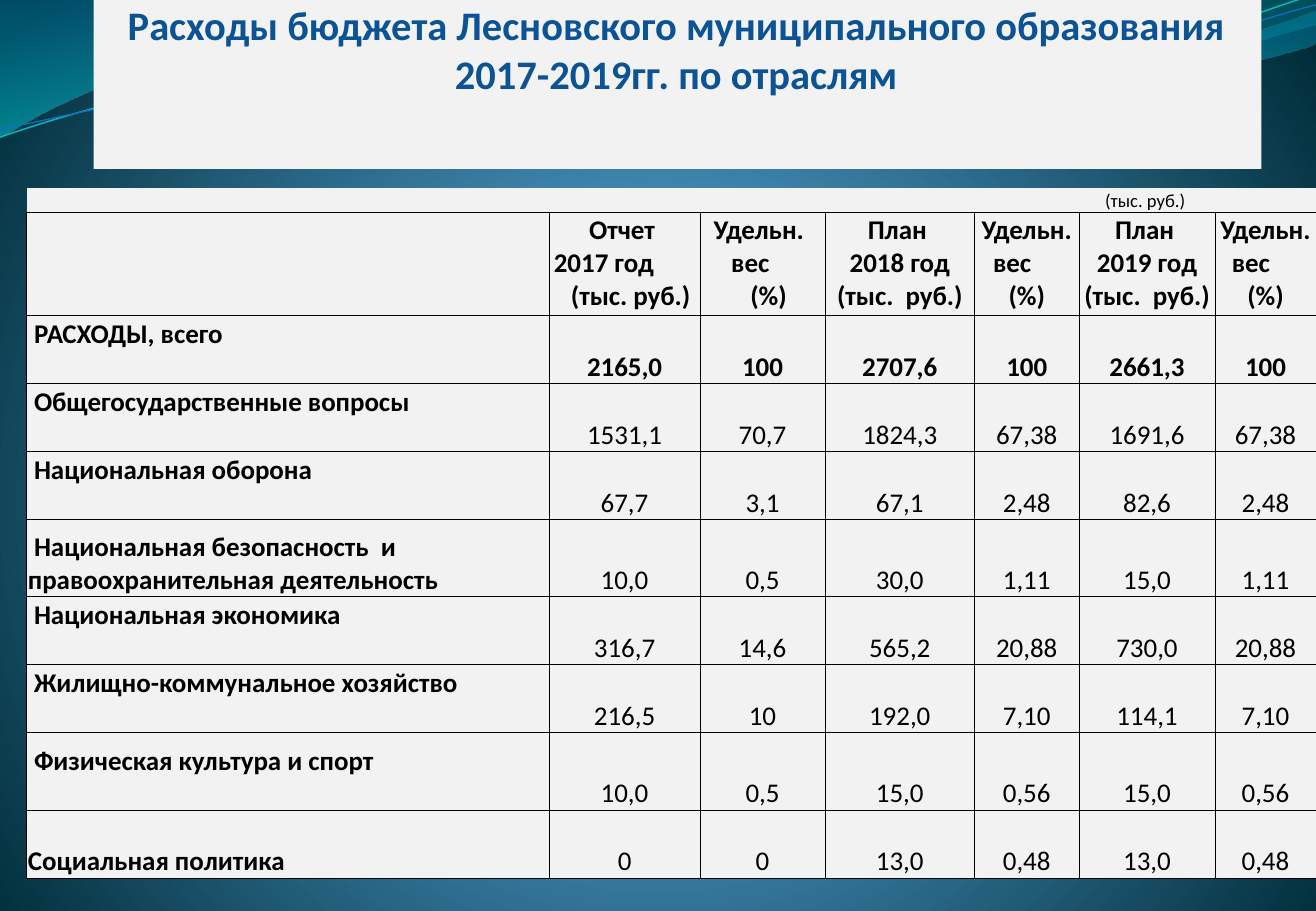
"""Builds the slide with the municipal budget expenses by sector, 2017-2019."""
from lxml import etree
from pptx import Presentation
from pptx import util as u
from pptx.dml.color import RGBColor
from pptx.enum import shapes, text
from pptx.oxml import parse_xml

W, H = 10.83, 7.5
NS = "http://schemas.openxmlformats.org/drawingml/2006/main"
FONT = "Calibri"
PANEL = RGBColor(0xF2, 0xF2, 0xF2)
TITLE_BLUE = RGBColor(0x0B, 0x53, 0x94)
BLACK = RGBColor(0, 0, 0)
TEAL_LINE = RGBColor(0x0A, 0xB8, 0xBF)
BLUE_LINE = RGBColor(0x0F, 0x6F, 0xC6)

TITLE = "Расходы бюджета Лесновского муниципального образования 2017-2019гг. по отраслям"
UNIT = "(тыс. руб.)"
COLS = [4.3, 1.24, 1.03, 1.23, 0.86, 1.12, 0.83]
ROWS = [0.2, 0.85, 0.56, 0.56, 0.56, 0.63, 0.56, 0.56, 0.64, 0.56]
# header lines with their shift from the column's centre
PLAIN_SHARE = [("Удельн.", 0), ("вес", -0.12), ("(%)", 0)]
HEADS = [
    [("", 0)],
    [("Отчет", -0.02), ("2017 год", -0.17), (UNIT, 0.05)],
    [("Удельн.", -0.03), ("вес", -0.1), ("(%)", 0.05)],
    [("План", -0.02), ("2018 год (тыс.  руб.)", 0)],
    PLAIN_SHARE,
    [("План", -0.02), ("2019 год (тыс.  руб.)", 0)],
    PLAIN_SHARE,
]
# label, first-line indent, lift above the cell bottom, values
SECTORS = [
    ("РАСХОДЫ, всего", 0.05, 0.27, "2165,0 100 2707,6 100 2661,3 100"),
    ("Общегосударственные вопросы", 0.05, 0.27, "1531,1 70,7 1824,3 67,38 1691,6 67,38"),
    ("Национальная оборона", 0.05, 0.27, "67,7 3,1 67,1 2,48 82,6 2,48"),
    ("Национальная безопасность  и правоохранительная деятельность", 0.05, 0,
     "10,0 0,5 30,0 1,11 15,0 1,11"),
    ("Национальная экономика", 0.05, 0.27, "316,7 14,6 565,2 20,88 730,0 20,88"),
    ("Жилищно-коммунальное хозяйство", 0.05, 0.27, "216,5 10 192,0 7,10 114,1 7,10"),
    ("Физическая культура и спорт", 0.05, 0.27, "10,0 0,5 15,0 0,56 15,0 0,56"),
    ("Социальная политика", 0, 0, "0 0 13,0 0,48 13,0 0,48"),
]
BACKDROP = [(0, "4AA0D6", 100), (25, "4C98C7", 100), (100, "002C38", 100)]
GLOW = ('<a:path path="circle"><a:fillToRect l="10000" t="110000" r="10000" '
        'b="100000"/></a:path>')
DOWN = '<a:lin ang="5400000" scaled="1"/>'
WAVES = [
    ([[(0, 0)], [(4.77, 0)], [(5.15, .17), (7.19, .63), (8.22, .63)],
      [(9.24, .63), (10.38, .26), (10.83, .09)], [(10.83, .36)],
      [(10.65, .44), (9.42, .76), (8.08, .75)], [(6.74, .75), (4.14, .28), (2.79, .34)],
      [(1.4, .35), (.5, .83), (0, 1.13)]],
     [(0, "0074A1", 45), (100, "00C6CF", 55)]),
    ([[(5.19, 0)], [(5.52, .11), (7.39, .62), (8.33, .65)],
      [(9.27, .69), (10.42, .32), (10.83, .21)], [(10.83, 0)]],
     [(0, "00A1A9", 30), (80, "008BBF", 45), (100, "008BBF", 45)]),
]
STRANDS = [
    ([[(0, 1.13)], [(.52, .95), (1.71, .58), (3, .53)], [(4.28, .47), (6.42, .88), (7.72, .79)],
      [(9.02, .69), (10.17, .14), (10.81, -.04)]], TEAL_LINE, 0.85),
    ([[(0, 1.06)], [(.51, .98), (1.77, .62), (3.07, .57)], [(4.36, .52), (6.47, .83), (7.76, .74)],
      [(9.06, .66), (10.2, .19), (10.83, .04)]], BLUE_LINE, 0.75),
]


def gradient(fill, parent, stops, direction):
    fill.background()
    gs = "".join(f'<a:gs pos="{pos * 1000}"><a:srgbClr val="{rgb}"><a:alpha val="{alpha * 1000}"/>'
                 '</a:srgbClr></a:gs>' for pos, rgb, alpha in stops)
    parent.replace(parent.find(f"{{{NS}}}noFill"), parse_xml(
        f'<a:gradFill xmlns:a="{NS}" rotWithShape="1"><a:gsLst>{gs}</a:gsLst>{direction}</a:gradFill>'))


def curve(s, outline, close):
    pts = [(u.Inches(x), u.Inches(y)) for part in outline for x, y in part]
    builder = s.shapes.build_freeform(*pts[0], scale=1.0)
    builder.add_line_segments(pts[1:], close=close)
    sp = builder.convert_to_shape()
    sp.shadow.inherit = False
    segments = iter(list(sp._element.iter(f"{{{NS}}}lnTo")))
    for part in outline[1:]:
        first, *rest = [next(segments) for _ in part]
        if rest:
            first.tag = f"{{{NS}}}cubicBezTo"
        for seg in rest:
            first.append(seg[0])
            seg.getparent().remove(seg)
    return sp


def write(tf, lines, size=16, bold=False, color=BLACK, align=text.PP_ALIGN.CENTER, indent=0):
    tf.word_wrap = True
    for i, (line, shift) in enumerate(lines):
        p = tf.add_paragraph() if i else tf.paragraphs[0]
        p.alignment = align
        ppr = p._p.get_or_add_pPr()
        ppr.set("marL", str(u.Inches(max(2 * shift, 0))))
        ppr.set("marR", str(u.Inches(max(-2 * shift, 0))))
        ppr.set("indent", str(u.Inches(indent)))
        if not line:
            etree.SubElement(p._p, f"{{{NS}}}endParaRPr", sz=str(size * 100))
            continue
        r = p.add_run()
        r.text = line
        f = r.font
        f.name, f.size, f.bold, f.color.rgb = FONT, u.Pt(size), bold, color


def style(cell, sides, lift=0, anchor=text.MSO_ANCHOR.BOTTOM):
    tcpr = cell._tc.get_or_add_tcPr()
    for side in "LRTB":
        paint = '<a:solidFill><a:srgbClr val="000000"/></a:solidFill>' if side in sides else "<a:noFill/>"
        tcpr.append(parse_xml(f'<a:ln{side} xmlns:a="{NS}" w="6350">{paint}</a:ln{side}>'))
    cell.fill.solid()
    cell.fill.fore_color.rgb = PANEL
    cell.margin_left = cell.margin_right = cell.margin_top = u.Inches(0.01)
    cell.margin_bottom = u.Inches(lift)
    cell.vertical_anchor = anchor


def add_budget(s):
    frame = s.shapes.add_table(len(ROWS), len(COLS), u.Inches(0.22), u.Inches(1.55),
                               u.Inches(sum(COLS)), u.Inches(sum(ROWS)))
    table = frame.table
    table.first_row = table.horz_banding = False
    for col, width in zip(table.columns, COLS):
        col.width = u.Inches(width)
    for row, height in zip(table.rows, ROWS):
        row.height = u.Inches(height)
    table.cell(0, 4).merge(table.cell(0, 6))
    for c, head in enumerate(HEADS):
        style(table.cell(0, c), "B")
        write(table.cell(0, c).text_frame, [(UNIT if c == 4 else "", 0)], size=11)
        style(table.cell(1, c), "LRTB", anchor=text.MSO_ANCHOR.TOP)
        write(table.cell(1, c).text_frame, head, bold=True)
    for i, (label, indent, lift, values) in enumerate(SECTORS):
        cell = table.cell(i + 2, 0)
        style(cell, "LRTB", lift)
        write(cell.text_frame, [(label, 0)], bold=True, align=text.PP_ALIGN.LEFT, indent=indent)
        for c, value in enumerate(values.split(), 1):
            cell = table.cell(i + 2, c)
            style(cell, "LRTB")
            write(cell.text_frame, [(value, 0)], bold=i == 0)


def main():
    prs = Presentation()
    prs.slide_width, prs.slide_height = u.Inches(W), u.Inches(H)
    s = prs.slides.add_slide(prs.slide_layouts[6])
    fill = s.background.fill
    gradient(fill, s.background._cSld.get_or_add_bgPr(), BACKDROP, GLOW)
    for outline, stops in WAVES:
        sp = curve(s, outline, True)
        sp.line.fill.background()
        gradient(sp.fill, sp._element.spPr, stops, DOWN)
    for outline, color, width in STRANDS:
        sp = curve(s, outline, False)
        sp.fill.background()
        sp.line.color.rgb, sp.line.width = color, u.Pt(width)

    sp = s.shapes.add_shape(shapes.MSO_SHAPE.RECTANGLE, u.Inches(0.77), 0, u.Inches(9.61), u.Inches(1.39))
    sp.shadow.inherit = False
    sp.fill.solid()
    sp.fill.fore_color.rgb = PANEL
    sp.line.fill.background()
    tf = sp.text_frame
    tf.margin_left = tf.margin_top = tf.margin_bottom = 0
    tf.margin_right = u.Inches(0.02)
    tf.vertical_anchor = text.MSO_ANCHOR.TOP
    write(tf, [(TITLE, 0)], size=24, bold=True, color=TITLE_BLUE)
    add_budget(s)
    prs.save("out.pptx")


if __name__ == "__main__":
    main()
